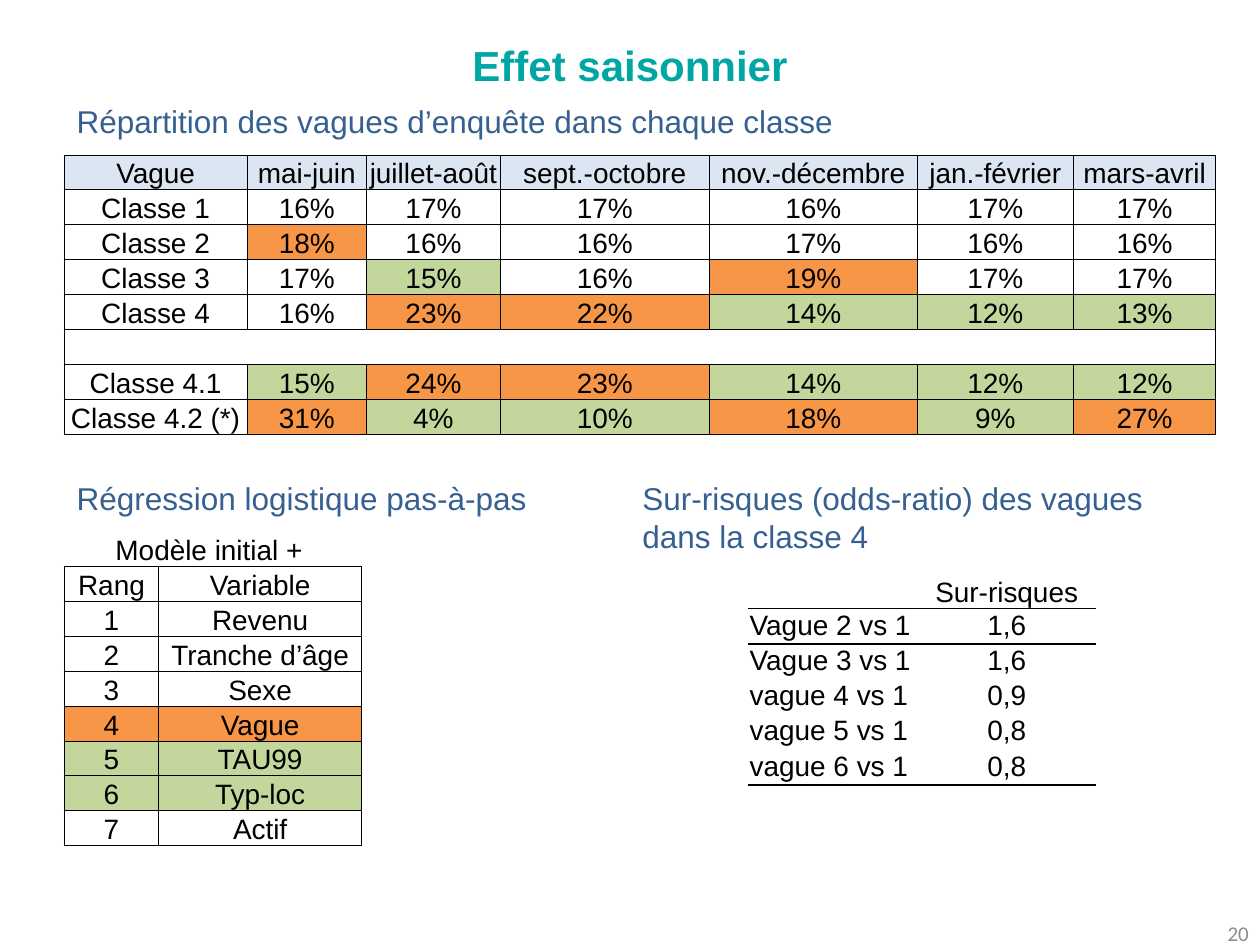
from lxml.etree import SubElement
from pptx import Presentation
from pptx.dml.color import RGBColor
from pptx.enum.text import MSO_ANCHOR, PP_ALIGN
from pptx.oxml.ns import qn
from pptx.util import Inches, Pt

NO_STYLE_NO_GRID = "{2D5ABB26-0587-4C30-8999-92F81FD0307C}"


def rgb(hex_code):
    return RGBColor.from_string(hex_code)


class SlideBuilder:
    FONT = "Arial"
    TEAL, BLUE, BLACK, GREY = "00A6A4", "376092", "000000", "8C8C8C"
    # Cell marks: header, over-represented, under-represented
    FILLS = {"h": "DCE6F2", "+": "F79646", "-": "C3D69B"}

    def __init__(self, prs):
        self.slide = prs.slides.add_slide(prs.slide_layouts[5])

    def format(self, paragraph, size, color, align=PP_ALIGN.LEFT, bold=False, font=FONT):
        paragraph.alignment = align
        paragraph.font.name = font
        paragraph.font.size = Pt(size)
        paragraph.font.bold = bold
        paragraph.font.color.rgb = rgb(color)

    def title(self, text, left, top, width, height):
        heading = self.slide.shapes.title
        heading.left, heading.top = Inches(left), Inches(top)
        heading.width, heading.height = Inches(width), Inches(height)
        heading.text_frame.text = text
        heading.text_frame.vertical_anchor = MSO_ANCHOR.MIDDLE
        self.format(heading.text_frame.paragraphs[0], 24, self.TEAL, PP_ALIGN.CENTER, True)

    def text(self, text, left, top, width, height, size=18, color=BLUE,
             anchor=MSO_ANCHOR.TOP, **style):
        box = self.slide.shapes.add_textbox(
            Inches(left), Inches(top), Inches(width), Inches(height))
        frame = box.text_frame
        frame.word_wrap = True
        frame.vertical_anchor = anchor
        frame.text = text
        self.format(frame.paragraphs[0], size, color, **style)

    def borders(self, cell, sides, width):
        properties = cell._tc.get_or_add_tcPr()
        for side in "LRTB":
            if side in sides:
                line = SubElement(properties, qn(f"a:ln{side}"), w=str(Pt(width)))
                fill = SubElement(line, qn("a:solidFill"))
                SubElement(fill, qn("a:srgbClr"), val=self.BLACK)

    def table(self, left, top, widths, row_height, rows, sides_at, marks=None,
              line=0.5, anchor=MSO_ANCHOR.BOTTOM, left_labels=False):
        """sides_at(row, column) names the drawn borders; marks holds a fill key per cell."""
        frame = self.slide.shapes.add_table(
            len(rows), len(widths), Inches(left), Inches(top),
            Inches(sum(widths)), Inches(row_height * len(rows)))
        table = frame.table
        table.first_row = table.horz_banding = False
        table._tbl.tblPr.find(qn("a:tableStyleId")).text = NO_STYLE_NO_GRID
        for column, width in zip(table.columns, widths):
            column.width = Inches(width)
        for r, values in enumerate(rows):
            table.rows[r].height = Inches(row_height)
            for c, value in enumerate(values):
                cell = table.cell(r, c)
                cell.text = value
                cell.margin_left = cell.margin_right = cell.margin_top = Inches(0.01)
                cell.margin_bottom = 0
                cell.vertical_anchor = anchor
                is_label = left_labels and c == 0
                self.format(cell.text_frame.paragraphs[0], 16, self.BLACK,
                            PP_ALIGN.LEFT if is_label else PP_ALIGN.CENTER)
                self.borders(cell, sides_at(r, c), line)
                fill = self.FILLS.get(marks[r][c]) if marks else None
                if fill:
                    cell.fill.solid()
                    cell.fill.fore_color.rgb = rgb(fill)
                else:
                    cell.fill.background()
        return table


def wave_sides(row, column):
    if row != 5:
        return "LRTB"
    return "TB" + {0: "L", 6: "R"}.get(column, "")


def rank_sides(row, column):
    return "LRTB" if row else "B"


def odds_sides(row, column):
    return {0: "B", 1: "T", 5: "B"}.get(row, "")


def main():
    prs = Presentation()
    prs.slide_width, prs.slide_height = Inches(10), Inches(7.5)
    page = SlideBuilder(prs)
    page.title("Effet saisonnier", 0, 0.21, 10, 0.61)

    # Share of survey waves in each class
    page.text("Répartition des vagues d’enquête dans chaque classe", 0.51, 0.76, 9.13, 0.4)
    wave_rows = [
        ["Vague", "mai-juin", "juillet-août", "sept.-octobre", "nov.-décembre",
         "jan.-février", "mars-avril"],
        ["Classe 1", "16%", "17%", "17%", "16%", "17%", "17%"],
        ["Classe 2", "18%", "16%", "16%", "17%", "16%", "16%"],
        ["Classe 3", "17%", "15%", "16%", "19%", "17%", "17%"],
        ["Classe 4", "16%", "23%", "22%", "14%", "12%", "13%"],
        [""] * 7,
        ["Classe 4.1", "15%", "24%", "23%", "14%", "12%", "12%"],
        ["Classe 4.2 (*)", "31%", "4%", "10%", "18%", "9%", "27%"],
    ]
    wave_marks = ["hhhhhhh", ".......", ".+.....", "..-.+..",
                  "..++---", ".......", ".-++---", ".+--+-+"]
    page.table(0.51, 1.23, [1.45, 0.95, 1.06, 1.66, 1.65, 1.24, 1.13], 0.26,
               wave_rows, wave_sides, wave_marks)

    # Stepwise regression ranking
    page.text("Régression logistique pas-à-pas", 0.51, 3.75, 4.49, 0.4)
    variables = ["Revenu", "Tranche d’âge", "Sexe", "Vague", "TAU99", "Typ-loc", "Actif"]
    rank_rows = [["Modèle initial + ", ""], ["Rang", "Variable"]]
    rank_rows += [[str(rank), name] for rank, name in enumerate(variables, 1)]
    rank_marks = [mark * 2 for mark in ".....+--."]
    ranking = page.table(0.51, 4.22, [0.75, 1.61], 0.26, rank_rows, rank_sides, rank_marks)
    ranking.cell(0, 0).merge(ranking.cell(0, 1))

    # Odds ratios of the waves in class 4
    page.text("Sur-risques (odds-ratio) des vagues dans la classe 4", 5, 3.75, 4.73, 0.71)
    odds_rows = [
        ["", "Sur-risques"],
        ["Vague 2 vs 1", "1,6"],
        ["Vague 3 vs 1", "1,6"],
        ["vague 4 vs 1", "0,9"],
        ["vague 5 vs 1", "0,8"],
        ["vague 6 vs 1", "0,8"],
    ]
    odds = page.table(5.94, 4.55, [1.34, 1.42], 0.28, odds_rows, odds_sides,
                      line=1, anchor=MSO_ANCHOR.TOP, left_labels=True)
    odds.cell(0, 1).vertical_anchor = MSO_ANCHOR.BOTTOM

    # Page number
    page.text("20", 7.68, 7.21, 2.33, 0.4, size=12, color=page.GREY,
              anchor=MSO_ANCHOR.MIDDLE, align=PP_ALIGN.RIGHT, font="Calibri")
    prs.save("out.pptx")


if __name__ == "__main__":
    main()
